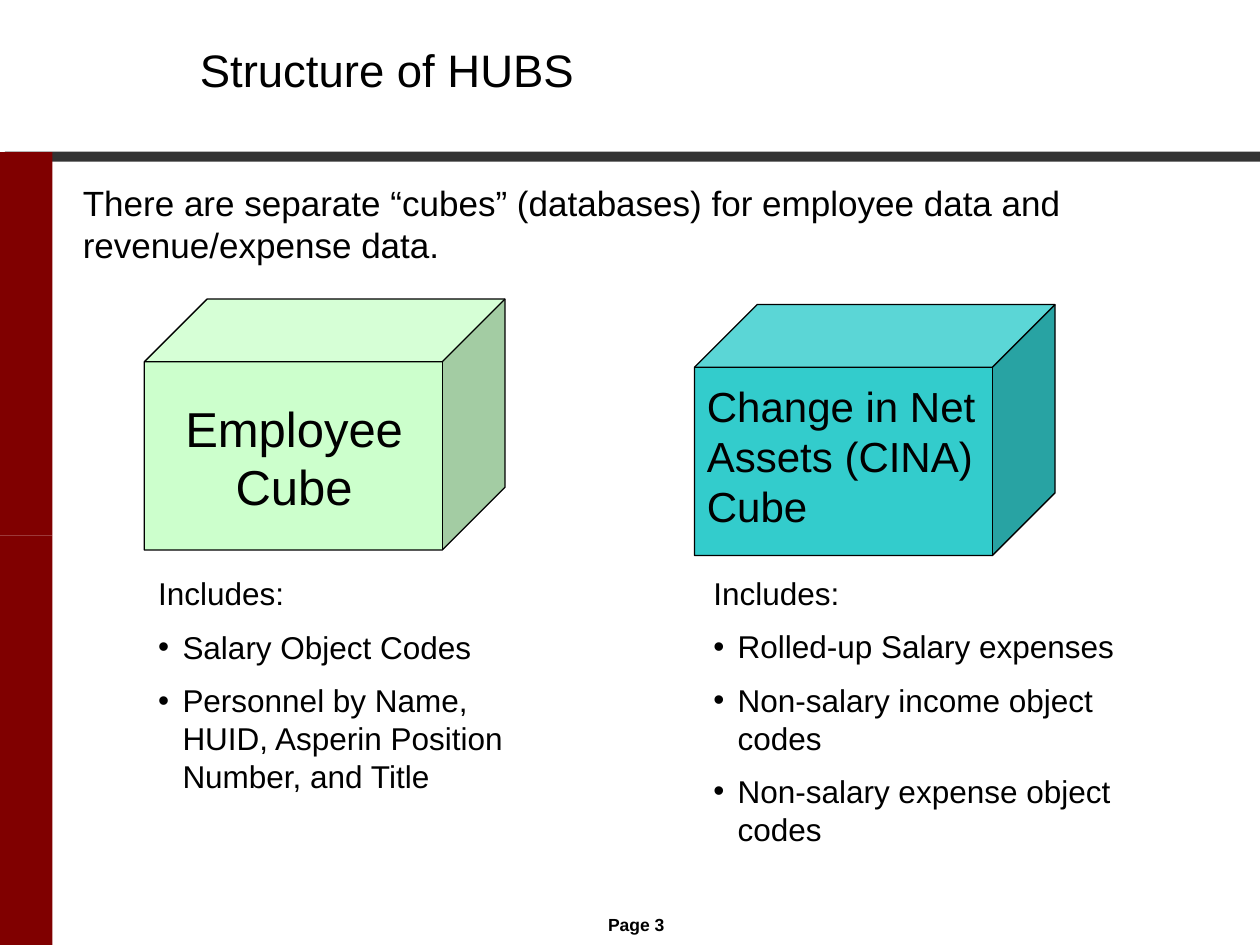
from lxml.etree import SubElement
from pptx import Presentation
from pptx.dml.color import RGBColor
from pptx.enum.shapes import MSO_SHAPE
from pptx.enum.text import MSO_ANCHOR, PP_ALIGN
from pptx.oxml.ns import qn
from pptx.util import Cm, Pt

COLORS = {
    "text": "000000",
    "rule": "333333",
    "side": "800000",
    "employee": "CCFFCC",
    "assets": "33CCCC",
}
FONT = "Arial"
INDENT = Cm(0.49)


def color(name):
    return RGBColor.from_string(COLORS[name])


def add_shape(page, kind, place, fill, outlined=False):
    shape = page.shapes.add_shape(kind, *map(Cm, place))
    shape.shadow.inherit = False
    shape.fill.solid()
    shape.fill.fore_color.rgb = color(fill)
    if outlined:
        shape.line.color.rgb = color("text")
        shape.line.width = Pt(0.75)
    else:
        shape.line.fill.background()
    return shape


def set_indent(para, bullet):
    properties = para._p.get_or_add_pPr()
    properties.set("marL", str(INDENT))
    properties.set("indent", str(-INDENT))
    if bullet:
        SubElement(properties, qn("a:buFont"), typeface=FONT)
        SubElement(properties, qn("a:buChar"), char="•")


def add_text(page, place, *lines, size, bold=False, align=PP_ALIGN.LEFT,
             anchor=MSO_ANCHOR.TOP, spacing=None, margin=None, listed=False):
    """Add a text box; a listed box has a heading followed by bullets."""
    box = page.shapes.add_textbox(*map(Cm, place))
    frame = box.text_frame
    frame.word_wrap = True
    frame.vertical_anchor = anchor
    if margin is not None:
        frame.margin_left = frame.margin_right = margin
        frame.margin_top = frame.margin_bottom = margin
    for index, line in enumerate(lines):
        para = frame.paragraphs[0] if index == 0 else frame.add_paragraph()
        para.alignment = align
        if spacing is not None:
            para.line_spacing = spacing
        if index:
            para.space_before = Pt(size / 2)
        if listed:
            set_indent(para, bullet=index > 0)
        span = para.add_run()
        span.text = line
        span.font.name = FONT
        span.font.size = Pt(size)
        span.font.bold = bold
        span.font.color.rgb = color("text")
    return box


def add_cube(page, left, top, fill):
    add_shape(page, MSO_SHAPE.CUBE, (left, top, 7.27, 5.06), fill, outlined=True)


def main():
    deck = Presentation()
    deck.slide_width, deck.slide_height = Cm(25.4), Cm(19.05)
    page = deck.slides.add_slide(deck.slide_layouts[6])

    # Frame: rule, side bar in two parts, page number
    add_shape(page, MSO_SHAPE.RECTANGLE, (0.1, 3.06, 25.3, 0.2), "rule")
    for top, height in ((10.8, 8.25), (3.07, 7.73)):
        add_shape(page, MSO_SHAPE.RECTANGLE, (0, top, 1.06, height), "side")
    add_text(page, (12.26, 18.34, 2.03, 0.51), "Page 3",
             size=10, bold=True, spacing=1.2, margin=0)

    # Title and introduction
    add_text(page, (3.78, 0, 21.39, 2.9), "Structure of HUBS",
             size=26, anchor=MSO_ANCHOR.MIDDLE, spacing=Pt(28))
    add_text(page, (1.42, 3.53, 23.39, 1.78),
             "There are separate “cubes” (databases) for employee data and "
             "revenue/expense data.", size=20)

    # Employee cube and its contents
    add_cube(page, 2.91, 6.03, "employee")
    add_text(page, (3.15, 7.9, 5.56, 2.62), "Employee Cube",
             size=28, align=PP_ALIGN.CENTER)
    add_text(page, (2.94, 11.45, 8.59, 6.02),
             "Includes:",
             "Salary Object Codes",
             "Personnel by Name, HUID, Asperin Position Number, and Title",
             size=18, listed=True)

    # Net assets cube and its contents
    add_cube(page, 14, 6.14, "assets")
    add_text(page, (14, 7.54, 6.38, 3.3), "Change in Net Assets (CINA) Cube",
             size=24)
    add_text(page, (14.13, 11.44, 8.59, 6.81),
             "Includes:",
             "Rolled-up Salary expenses",
             "Non-salary income object codes",
             "Non-salary expense object codes",
             size=18, listed=True)

    deck.save("out.pptx")


if __name__ == "__main__":
    main()
